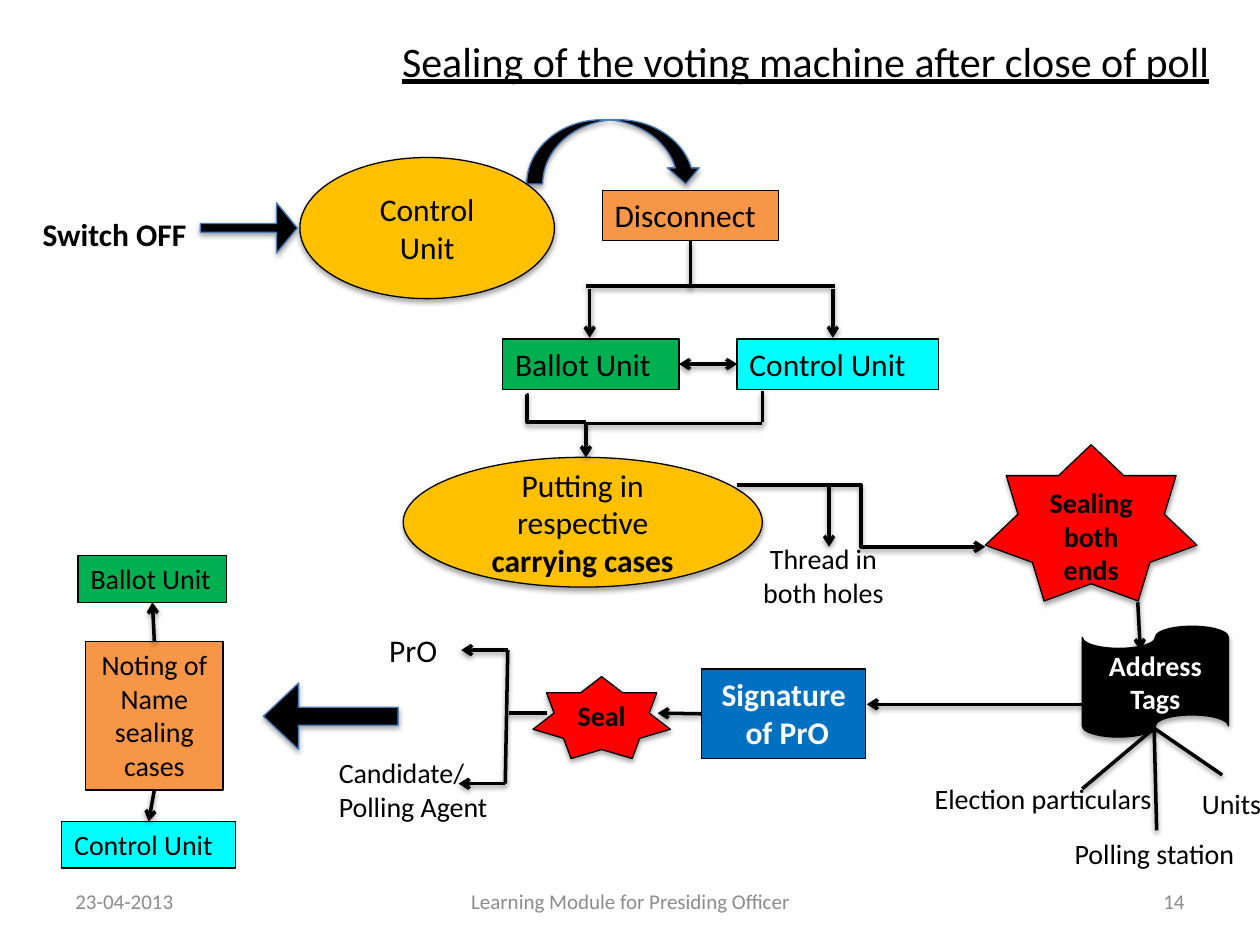
from dataclasses import dataclass

from lxml import etree
from pptx import Presentation
from pptx.dml.color import RGBColor
from pptx.enum import shapes, text
from pptx.oxml import ns
from pptx.util import Inches, Pt

SHAPE = shapes.MSO_SHAPE
LEFT, CENTER, RIGHT = text.PP_ALIGN.LEFT, text.PP_ALIGN.CENTER, text.PP_ALIGN.RIGHT
TOP, MIDDLE = text.MSO_ANCHOR.TOP, text.MSO_ANCHOR.MIDDLE


@dataclass(frozen=True)
class Theme:
    font: str = "Calibri"
    black: str = "000000"
    white: str = "FFFFFF"
    grey: str = "8C8C8C"
    gold: str = "FFC000"
    orange: str = "F79646"
    green: str = "00B050"
    cyan: str = "00FFFF"
    red: str = "FF0000"
    blue: str = "0070C0"
    arrow_edge: str = "4B7EBC"
    title: int = 24
    large: int = 18
    small: int = 16
    footer: int = 12
    edge: float = 0.75
    wire: float = 2


T = Theme()


def rgb(value):
    return RGBColor.from_string(value)


def sub(parent, tag, **attrs):
    return etree.SubElement(parent, ns.qn(tag), {k: str(v) for k, v in attrs.items()})


def add_shadow(sp, alpha, dist):
    """Give the shape a soft black shadow that falls straight down."""
    props = sp._element.spPr
    effects = props.find(ns.qn("a:effectLst"))
    if effects is None:
        effects = sub(props, "a:effectLst")
    shadow = sub(effects, "a:outerShdw", blurRad=Pt(3.1), dist=Pt(dist),
                 dir=90 * 60000, rotWithShape=0)
    sub(sub(shadow, "a:srgbClr", val=T.black), "a:alpha", val=alpha * 1000)


def format_run(r, size, color=T.black, bold=False, underline=False):
    values = {"name": T.font, "size": Pt(size), "bold": bold, "underline": underline}
    for name, value in values.items():
        setattr(r.font, name, value)
    r.font.color.rgb = rgb(color)


def write(sp, words, size, color=T.black, bold=False, align=LEFT, anchor=TOP, grow=False):
    """Write one paragraph per line of words."""
    tf = sp.text_frame
    fit = text.MSO_AUTO_SIZE
    frame = {"word_wrap": True, "vertical_anchor": anchor,
             "auto_size": fit.SHAPE_TO_FIT_TEXT if grow else fit.NONE}
    for name, value in frame.items():
        setattr(tf, name, value)
    for i, line in enumerate(words.split("\n")):
        p = tf.add_paragraph() if i else tf.paragraphs[0]
        p.alignment = align
        r = p.add_run()
        r.text = line
        format_run(r, size, color, bold)


def add_title(s, words):
    sp = s.shapes.title
    sp.left, sp.top, sp.width, sp.height = map(Inches, (0.31, 0.23, 9.39, 0.55))
    write(sp, words, T.title, align=RIGHT)
    format_run(sp.text_frame.paragraphs[0].runs[0], T.title, underline=True)


def add_label(s, box, words, size=T.small, grow=True, **style):
    sp = s.shapes.add_textbox(*map(Inches, box))
    write(sp, words, size, grow=grow, **style)


def add_figure(s, kind, box, fill, line=T.black):
    sp = s.shapes.add_shape(kind, *map(Inches, box))
    sp.shadow.inherit = False
    sp.fill.solid()
    sp.fill.fore_color.rgb = rgb(fill)
    sp.line.color.rgb = rgb(line)
    sp.line.width = Pt(T.edge)
    return sp


def add_box(s, box, words, fill, size=T.small, **style):
    sp = add_figure(s, SHAPE.RECTANGLE, box, fill)
    write(sp, words, size, grow=True, **style)
    return sp


def add_emblem(s, kind, box, words, fill, size=T.small, **style):
    """Add a shadowed shape with centred text."""
    sp = add_figure(s, kind, box, fill)
    add_shadow(sp, 35, 1.8)
    write(sp, words, size, align=CENTER, anchor=MIDDLE, **style)
    return sp


def add_block_arrow(s, kind, box, adjustments=()):
    sp = add_figure(s, kind, box, T.black, T.arrow_edge)
    add_shadow(sp, 35, 1.8)
    for i, value in enumerate(adjustments):
        sp.adjustments[i] = value


def add_wire(s, x1, y1, x2, y2, ends="", begin=None, end=None, bend=None):
    """Draw a line; ends names its arrowheads, begin and end are (shape, site)."""
    kind = shapes.MSO_CONNECTOR.STRAIGHT if bend is None else shapes.MSO_CONNECTOR.ELBOW
    c = s.shapes.add_connector(kind, *map(Inches, (x1, y1, x2, y2)))
    if begin:
        c.begin_connect(*begin)
    if end:
        c.end_connect(*end)
    if bend is not None:
        guides = c._element.spPr.find(ns.qn("a:prstGeom")).get_or_add_avLst()
        sub(guides, "a:gd", name="adj1", fmla=f"val {int(bend * 100000)}")
    c.line.color.rgb = rgb(T.black)
    c.line.width = Pt(T.wire)
    for tip in ends.split():
        sub(c.line._get_or_add_ln(), f"a:{tip}End", type="arrow")
    add_shadow(c, 38, 1.6)


def add_unit_flow(s):
    """Switch off, disconnect, and put both units in their cases."""
    add_label(s, (0.24, 1.66, 1.4, 0.4), "Switch OFF", T.large, bold=True)
    add_block_arrow(s, SHAPE.RIGHT_ARROW, (1.59, 1.61, 0.77, 0.4), (0.174, 0.413))
    add_block_arrow(s, SHAPE.CURVED_DOWN_ARROW, (4.18, 0.95, 1.39, 0.51))
    add_emblem(s, SHAPE.OVAL, (2.38, 1.25, 2.02, 1.12), "Control Unit", T.gold, T.large)
    cases = add_emblem(s, SHAPE.OVAL, (3.2, 3.63, 2.85, 1.03),
                       "Putting in respective ", T.gold, T.large)
    r = cases.text_frame.paragraphs[0].add_run()
    r.text = "carrying cases"
    format_run(r, T.large, bold=True)
    disconnect = add_box(s, (4.78, 1.51, 1.4, 0.4), "Disconnect", T.orange, T.large)
    ballot = add_box(s, (3.99, 2.69, 1.4, 0.4), "Ballot Unit", T.green, T.large)
    control = add_box(s, (5.85, 2.69, 1.6, 0.4), "Control Unit", T.cyan, T.large)

    add_wire(s, 5.48, 1.91, 5.48, 2.28, begin=(disconnect, 2))
    add_wire(s, 4.65, 2.27, 6.63, 2.27)
    for x in (4.68, 6.61):
        add_wire(s, x, 2.29, x, 2.68, "tail")
    add_wire(s, 5.39, 2.89, 5.85, 2.89, "head tail", (ballot, 3), (control, 1))
    add_wire(s, 4.18, 3.13, 4.65, 3.35, bend=0.01)
    add_wire(s, 6.05, 3.1, 6.05, 3.35)
    add_wire(s, 4.65, 3.36, 6.05, 3.36)
    add_wire(s, 4.65, 3.36, 4.65, 3.63, "tail")


def add_sealing_flow(s):
    """Thread and seal the cases, then attach the address tags."""
    star = add_emblem(s, SHAPE.STAR_7_POINT, (7.82, 3.53, 1.68, 1.24),
                      "Sealing both ends", T.red, bold=True)
    star.text_frame.margin_top = Inches(0.32)
    add_label(s, (5.94, 4.25, 1.19, 0.64), "Thread in both holes", align=CENTER)
    add_emblem(s, SHAPE.FLOWCHART_PUNCHED_TAPE, (8.59, 4.97, 1.16, 0.88),
               "Address Tags", T.black, color=T.white, bold=True)
    add_wire(s, 5.85, 3.85, 7.82, 4.34, "tail", bend=0.5)
    add_wire(s, 6.58, 3.85, 6.58, 4.34, "tail")
    add_wire(s, 9.03, 4.78, 9.05, 5.16, "tail")
    for x, y in ((8.59, 6.26), (9.18, 6.59), (9.7, 6.15)):
        add_wire(s, 9.16, 5.78, x, y)
    for box, words in (((7.32, 6.15, 1.98, 0.37), "Election particulars"),
                       ((8.43, 6.59, 1.62, 0.37), "Polling station"),
                       ((9.39, 6.19, 0.75, 0.37), " Units")):
        add_label(s, box, words)


def add_signing_flow(s):
    """Sign and seal the tags, then note the names on the cases."""
    signature = add_box(s, (5.57, 5.31, 1.3, 0.71), "Signature\n of PrO", T.blue, T.large,
                        color=T.white, bold=True, align=CENTER)
    add_wire(s, 8.6, 5.59, 6.88, 5.59, "tail")
    add_wire(s, 5.57, 5.66, 5.22, 5.66, "tail", begin=(signature, 1))
    add_wire(s, 4.04, 5.66, 4.34, 5.66)
    add_wire(s, 4.03, 5.16, 4.01, 6.22)
    for x, y in ((4.03, 5.16), (4.01, 6.22)):
        add_wire(s, x, y, x - 0.37, y, "tail")
    add_emblem(s, SHAPE.STAR_7_POINT, (4.23, 5.37, 1.09, 0.65), "Seal", T.red, bold=True)
    add_label(s, (2.99, 4.96, 0.67, 0.4), "PrO", T.large)
    add_label(s, (2.59, 5.95, 1.65, 0.64), "Candidate/\nPolling Agent")
    add_block_arrow(s, SHAPE.LEFT_ARROW, (2.09, 5.42, 1.07, 0.53), (0.268, 0.529))

    noting = add_box(s, (0.68, 5.09, 1.09, 1.18), "Noting of Name sealing cases",
                     T.orange, align=CENTER)
    control = add_box(s, (0.49, 6.52, 1.38, 0.37), "Control Unit", T.cyan)
    ballot = add_box(s, (0.62, 4.41, 1.18, 0.37), "Ballot Unit", T.green)
    add_wire(s, 1.22, 5.09, 1.21, 4.78, "tail", (noting, 0), (ballot, 2))
    add_wire(s, 1.22, 6.27, 1.18, 6.52, "tail", (noting, 2), (control, 0))


def add_footer(s):
    for left, width, words, align in ((0.5, 2.33, "23-04-2013", LEFT),
                                      (3.42, 3.17, "Learning Module for Presiding Officer", CENTER),
                                      (7.17, 2.33, "14", RIGHT)):
        add_label(s, (left, 6.95, width, 0.4), words, T.footer, grow=False,
                  color=T.grey, align=align, anchor=MIDDLE)


def main():
    prs = Presentation()
    prs.slide_width, prs.slide_height = Inches(10), Inches(7.5)
    s = prs.slides.add_slide(prs.slide_layouts[5])
    add_title(s, "Sealing of the voting machine after close of poll")
    add_footer(s)
    add_unit_flow(s)
    add_sealing_flow(s)
    add_signing_flow(s)
    prs.save("out.pptx")


if __name__ == "__main__":
    main()
